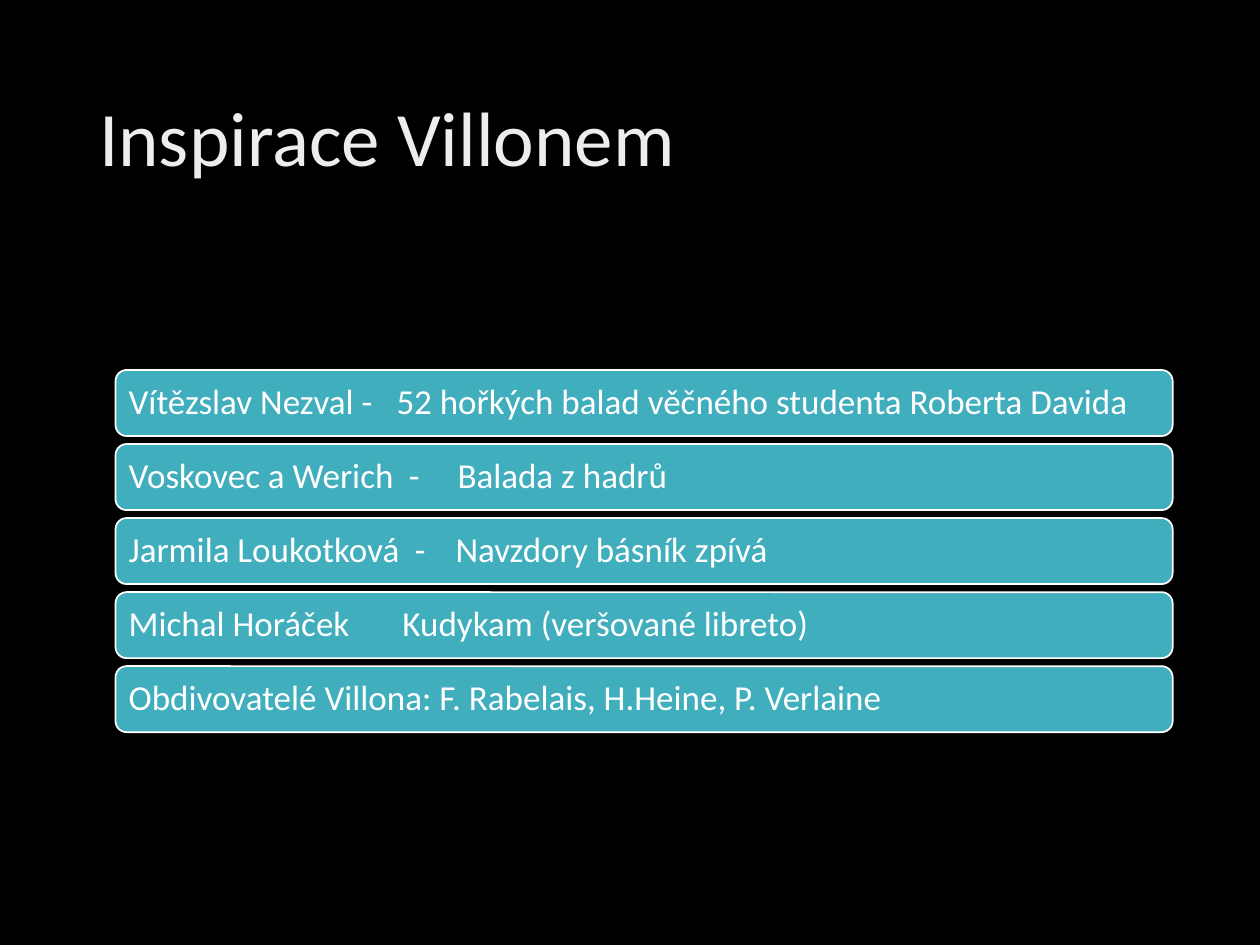
from lxml.etree import SubElement
from pptx import Presentation
from pptx.dml.color import RGBColor
from pptx.enum.shapes import MSO_SHAPE
from pptx.enum.text import MSO_ANCHOR, PP_ALIGN
from pptx.oxml.ns import qn
from pptx.util import Cm, Pt

COLORS = {"background": "000000", "title": "EDEDED", "bar": "41AEBD", "white": "FFFFFF"}
FONT = "Calibri"
BAR_HEIGHT = 1.33

# Text of each bar with its tab stops in cm
INSPIRATIONS = [
    ("Vítězslav Nezval -\t52 hořkých balad věčného studenta Roberta Davida", [5.4]),
    ("Voskovec a Werich\t-\tBalada z hadrů", [5.65, 6.63]),
    ("Jarmila Loukotková\t-\tNavzdory básník zpívá", [5.77, 6.59]),
    ("Michal Horáček\tKudykam (veršované libreto)", [5.52]),
    ("Obdivovatelé Villona: F. Rabelais, H.Heine, P. Verlaine", []),
]


def rgb(name):
    return RGBColor.from_string(COLORS[name])


def write_line(frame, text, size, color, tab_stops=()):
    """Fill a text frame with one left-aligned, vertically centred paragraph."""
    frame.word_wrap = True
    frame.vertical_anchor = MSO_ANCHOR.MIDDLE
    paragraph = frame.paragraphs[0]
    paragraph.text = text
    if tab_stops:
        tab_list = SubElement(paragraph._p.get_or_add_pPr(), qn("a:tabLst"))
        for position in tab_stops:
            SubElement(tab_list, qn("a:tab"), pos=str(Cm(position)), algn="l")
    paragraph.alignment = PP_ALIGN.LEFT
    paragraph.line_spacing = 0.9
    for run in paragraph.runs:
        run.font.name = FONT
        run.font.size = Pt(size)
        run.font.color.rgb = rgb(color)


def add_title(slide, left, top, width, height):
    title = slide.shapes.add_textbox(Cm(left), Cm(top), Cm(width), Cm(height))
    write_line(title.text_frame, "Inspirace Villonem", 44, "title")


def add_inspiration_list(slide, left, top, width, height):
    """Spread the bars evenly from the top to the bottom of the box."""
    pitch = (height - BAR_HEIGHT) / (len(INSPIRATIONS) - 1)
    for index, (text, tab_stops) in enumerate(INSPIRATIONS):
        bar = slide.shapes.add_shape(
            MSO_SHAPE.ROUNDED_RECTANGLE,
            Cm(left), Cm(top + index * pitch), Cm(width), Cm(BAR_HEIGHT),
        )
        bar.shadow.inherit = False
        bar.fill.solid()
        bar.fill.fore_color.rgb = rgb("bar")
        bar.line.color.rgb = rgb("white")
        bar.line.width = Pt(1)
        frame = bar.text_frame
        # The rounded corners add 0.06 cm to the inset of the text
        frame.margin_left = frame.margin_right = Cm(0.2)
        frame.margin_top = frame.margin_bottom = Cm(0.2)
        write_line(frame, text, 20, "white", tab_stops)


def main():
    presentation = Presentation()
    presentation.slide_width, presentation.slide_height = Cm(25.4), Cm(19.05)
    slide = presentation.slides.add_slide(presentation.slide_layouts[6])
    slide.background.fill.solid()
    slide.background.fill.fore_color.rgb = rgb("background")
    add_title(slide, 1.75, 1.02, 21.9, 3.68)
    add_inspiration_list(slide, 2.33, 7.46, 21.31, 7.3)
    presentation.save("out.pptx")


if __name__ == "__main__":
    main()
